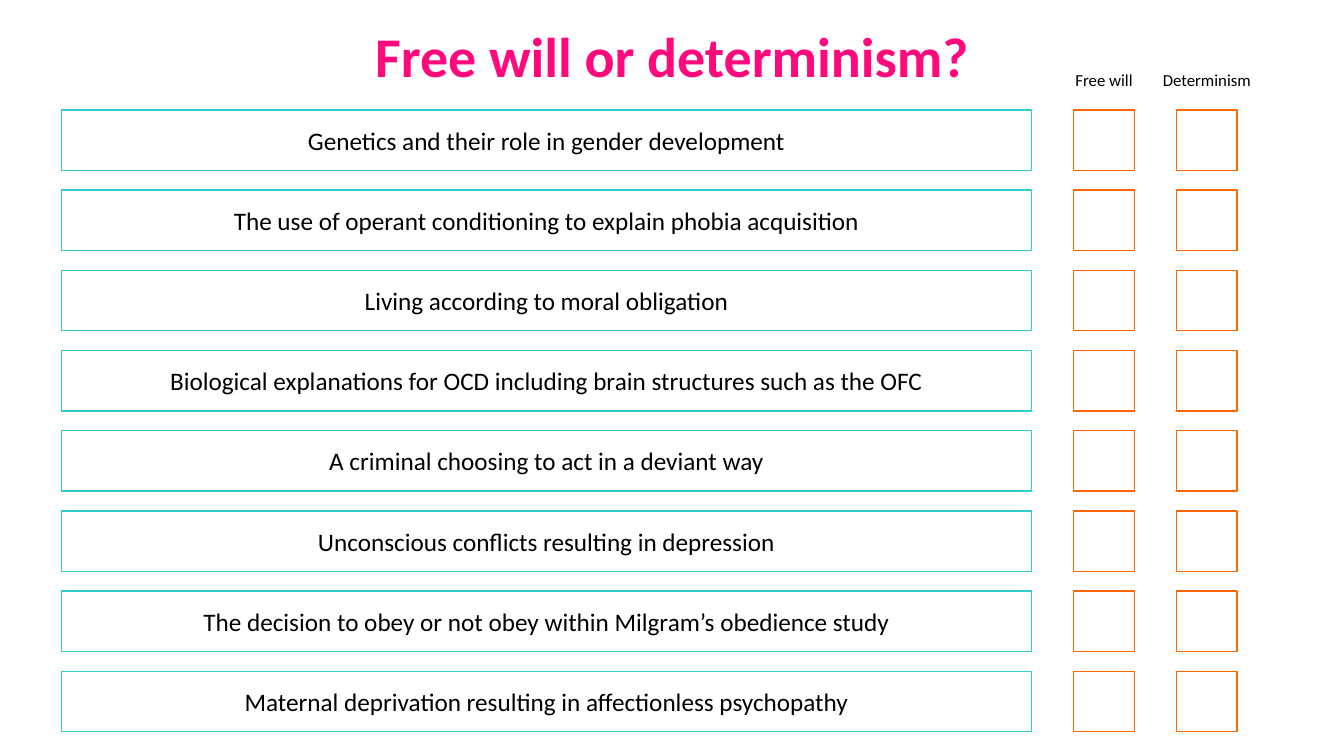
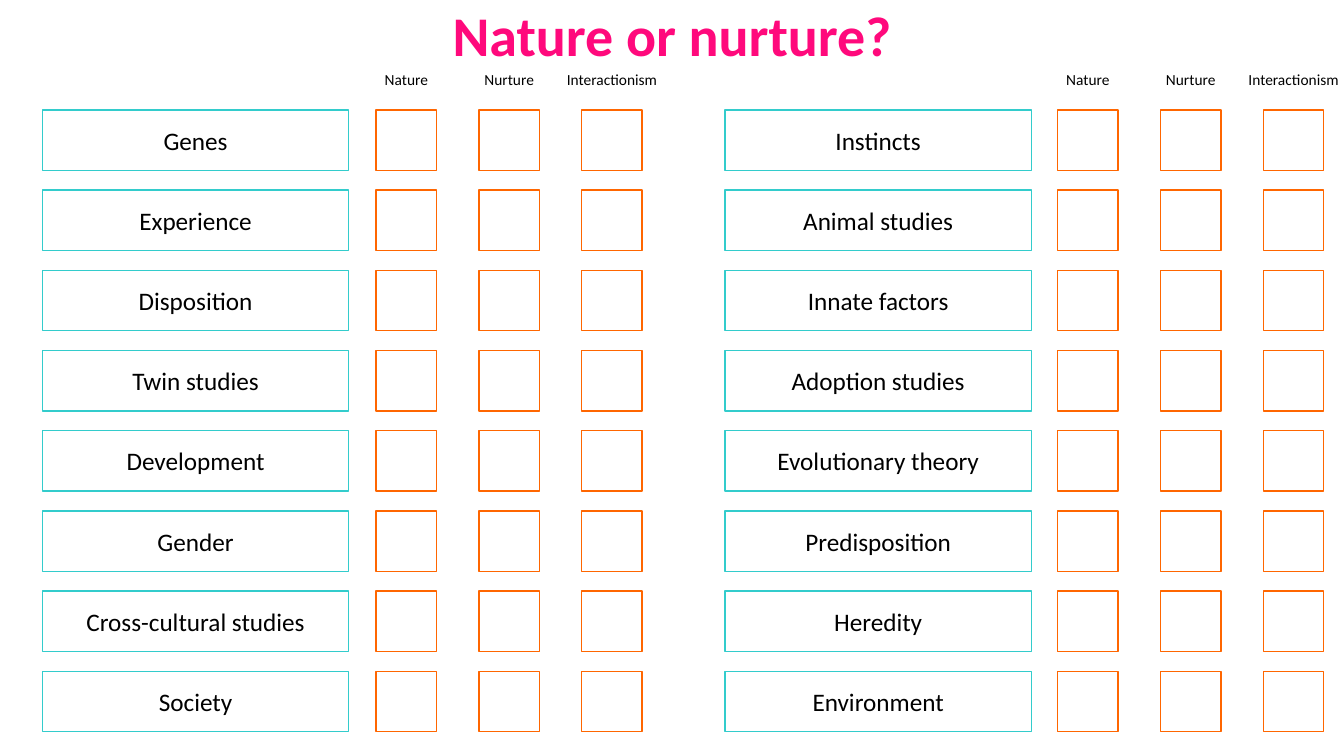
"""Build two tick-box sorting worksheets on debates in psychology."""
from dataclasses import dataclass

from pptx import Presentation
from pptx.dml import color
from pptx.enum import shapes, text
from pptx.util import Inches, Pt

FONT = "Calibri"
WHITE, BLACK = "FFFFFF", "000000"
PINK, TEAL, ORANGE = "FF097C", "33CCCC", "FF6600"
SLIDE_WIDTH, SLIDE_HEIGHT = 13.33, 7.5
FIRST_ROW, LAST_ROW = 1.09, 6.66
BOX_SIZE, BOX_PITCH = 0.6, 1.02
HEADING_TOP, HEADING_WIDTH = 0.49, 1.12


@dataclass(frozen=True)
class Panel:
    """A column of statements with tick boxes to its right."""
    left: float
    width: float
    boxes_left: float
    headings: tuple[str, ...]
    heading_size: int
    statements: tuple[str, ...]


@dataclass(frozen=True)
class Worksheet:
    """A titled slide holding one or more panels."""
    title: str
    title_top: float
    panels: tuple[Panel, ...]


NATURE_HEADINGS = ("Nature", "Nurture", "Interactionism")
WORKSHEETS = (
    Worksheet("Free will or determinism?", 0.16, (
        Panel(0.61, 9.62, 10.65, ("Free will", "Determinism"), 12, (
            "Genetics and their role in gender development",
            "The use of operant conditioning to explain phobia acquisition",
            "Living according to moral obligation",
            "Biological explanations for OCD including brain structures such as the OFC",
            "A criminal choosing to act in a deviant way",
            "Unconscious conflicts resulting in depression",
            "The decision to obey or not obey within Milgram’s obedience study",
            "Maternal deprivation resulting in affectionless psychopathy",
        )),
    )),
    Worksheet("Nature or nurture?", -0.04, (
        Panel(0.42, 3.04, 3.73, NATURE_HEADINGS, 11, (
            "Genes", "Experience", "Disposition", "Twin studies",
            "Development", "Gender", "Cross-cultural studies", "Society",
        )),
        Panel(7.19, 3.04, 10.49, NATURE_HEADINGS, 11, (
            "Instincts", "Animal studies", "Innate factors", "Adoption studies",
            "Evolutionary theory", "Predisposition", "Heredity", "Environment",
        )),
    )),
)


def rgb(value: str) -> color.RGBColor:
    """Turn a hex string into a colour."""
    return color.RGBColor.from_string(value)


def write(box, words: str, *, size: int, colour: str = BLACK, bold: bool = False,
          anchor=text.MSO_ANCHOR.MIDDLE) -> None:
    """Put one centred, formatted paragraph in a shape."""
    frame = box.text_frame
    frame.word_wrap = True
    frame.auto_size = text.MSO_AUTO_SIZE.NONE
    frame.vertical_anchor = anchor
    para = frame.paragraphs[0]
    para.alignment = text.PP_ALIGN.CENTER
    span = para.add_run()
    span.text = words
    span.font.name = FONT
    span.font.size = Pt(size)
    span.font.bold = bold
    span.font.color.rgb = rgb(colour)


def add_rectangle(page, left: float, top: float, width: float, outline: str):
    """Draw a white outlined rectangle of row height."""
    box = page.shapes.add_shape(shapes.MSO_SHAPE.RECTANGLE, Inches(left), Inches(top),
                                Inches(width), Inches(BOX_SIZE))
    box.shadow.inherit = False
    box.fill.solid()
    box.fill.fore_color.rgb = rgb(WHITE)
    box.line.color.rgb = rgb(outline)
    box.line.width = Pt(1)
    return box


def add_panel(page, panel: Panel) -> None:
    """Draw the headings, statements and tick boxes of a panel."""
    columns = [panel.boxes_left + BOX_PITCH * index for index in range(len(panel.headings))]
    for left, heading in zip(columns, panel.headings):
        label = page.shapes.add_textbox(
            Inches(left + (BOX_SIZE - HEADING_WIDTH) / 2), Inches(HEADING_TOP),
            Inches(HEADING_WIDTH), Inches(BOX_SIZE))
        write(label, heading, size=panel.heading_size)
    row_pitch = (LAST_ROW - FIRST_ROW) / (len(panel.statements) - 1)
    for row, statement in enumerate(panel.statements):
        top = FIRST_ROW + row_pitch * row
        write(add_rectangle(page, panel.left, top, panel.width, TEAL), statement, size=18)
        for left in columns:
            add_rectangle(page, left, top, BOX_SIZE, ORANGE)


def add_worksheet(deck, sheet: Worksheet) -> None:
    """Add a slide with its title and panels."""
    page = deck.slides.add_slide(deck.slide_layouts.get_by_name("Title Only"))
    title = page.shapes.title
    title.left, title.top = Inches(0), Inches(sheet.title_top)
    title.width, title.height = Inches(SLIDE_WIDTH), Inches(0.77)
    write(title, sheet.title, size=40, colour=PINK, bold=True, anchor=text.MSO_ANCHOR.TOP)
    for panel in sheet.panels:
        add_panel(page, panel)


def main() -> None:
    """Build and save the deck."""
    deck = Presentation()
    deck.slide_width, deck.slide_height = Inches(SLIDE_WIDTH), Inches(SLIDE_HEIGHT)
    for sheet in WORKSHEETS:
        add_worksheet(deck, sheet)
    deck.save("out.pptx")


if __name__ == "__main__":
    main()
